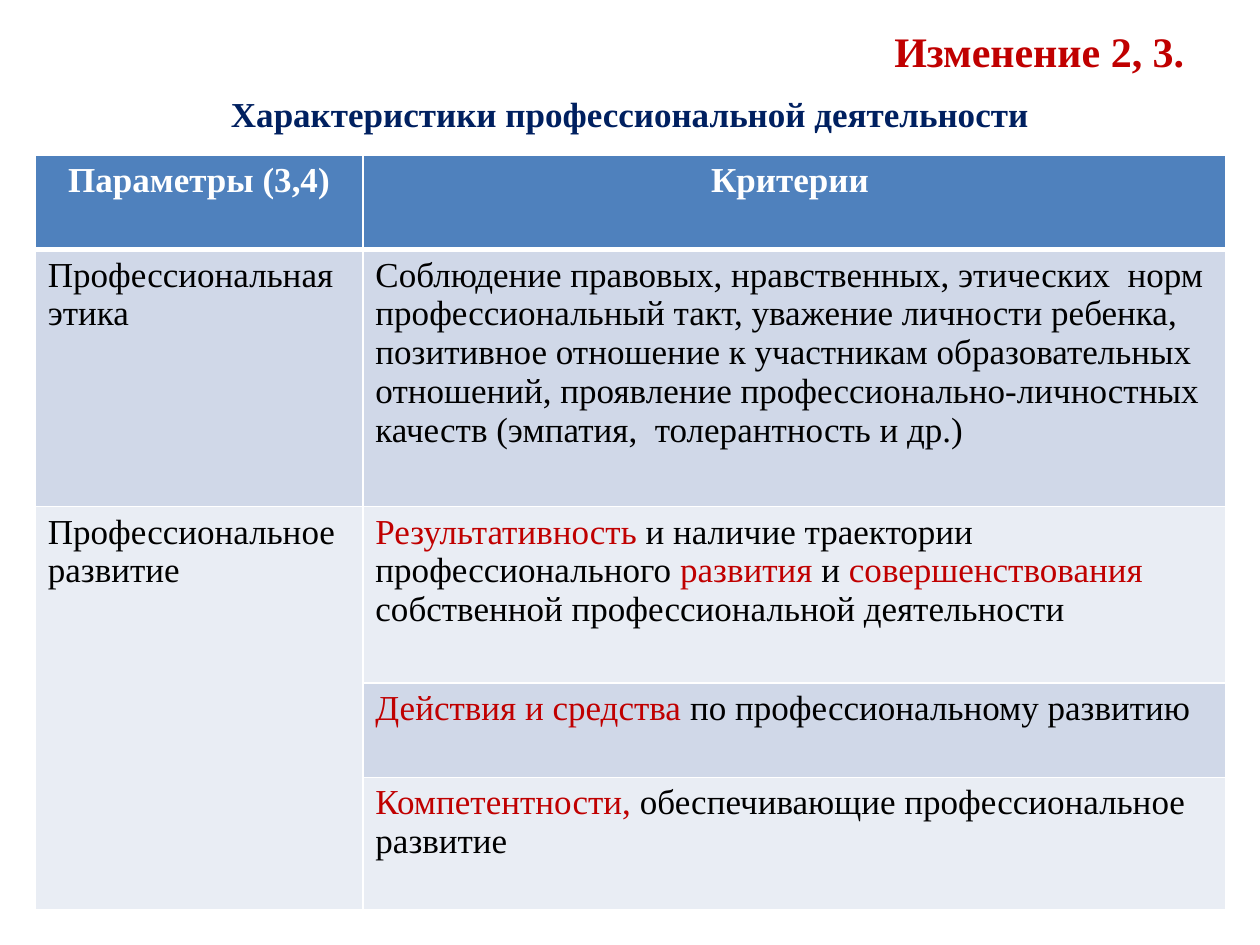
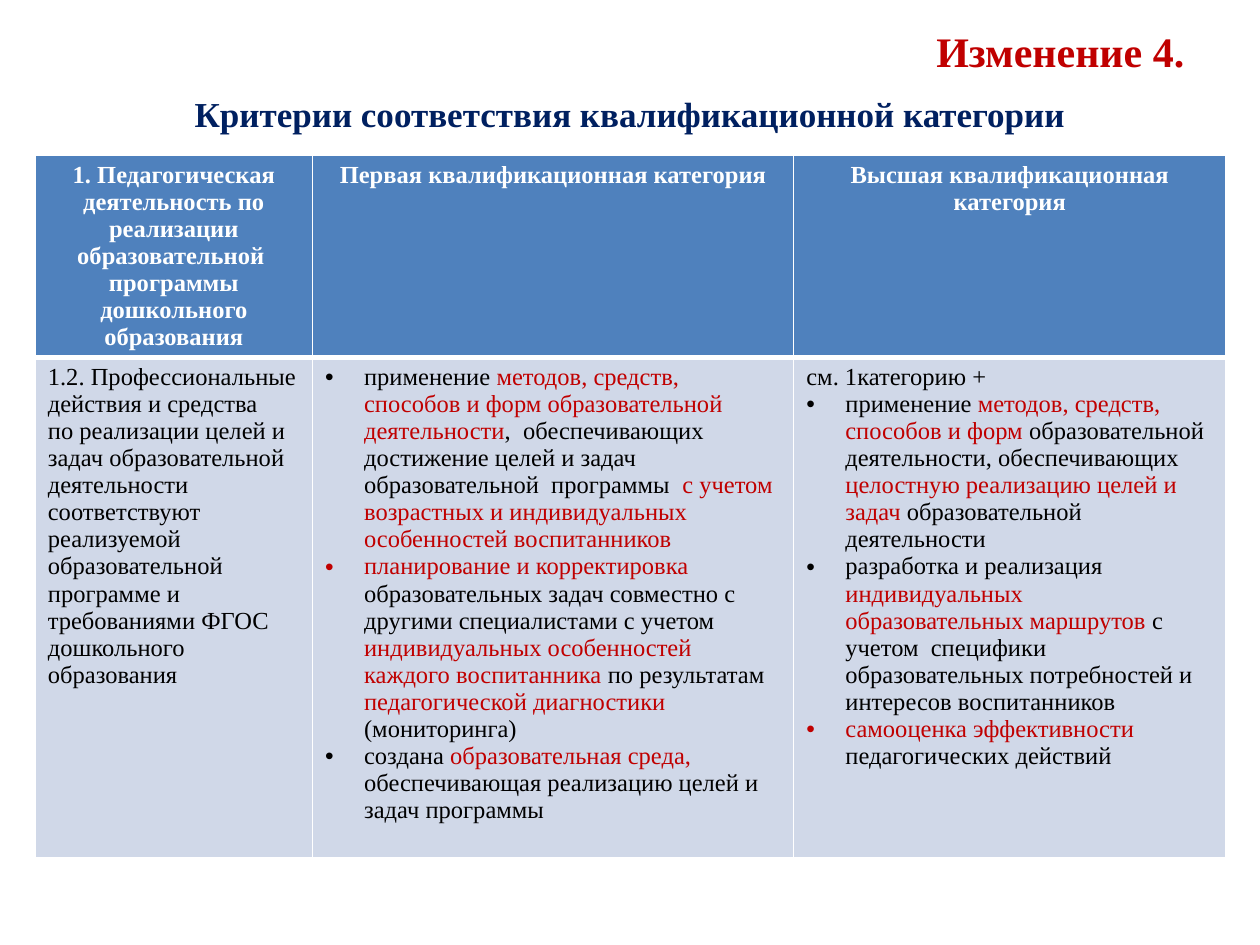
from dataclasses import dataclass
from typing import NamedTuple

from lxml.etree import SubElement
from pptx import Presentation
from pptx.dml.color import RGBColor
from pptx.enum.text import MSO_ANCHOR, PP_ALIGN
from pptx.oxml import parse_xml
from pptx.oxml.ns import nsdecls, qn
from pptx.util import Emu, Inches, Pt

COLORS = {
    "accent": "C00000",
    "heading": "002060",
    "ink": "000000",
    "white": "FFFFFF",
    "header": "4F81BD",
    "odd": "D0D8E8",
    "even": "E9EDF4",
}
FONT = "Times New Roman"
SLIDE_WIDTH, SLIDE_HEIGHT = Inches(10), Inches(7.5)
GRID = 100
BULLET_INDENT = Inches(0.31)
THIN, THICK = 1, 3


class Area(NamedTuple):
    left: float
    top: float
    width: float
    height: float


class Line(NamedTuple):
    text: str
    bullet: bool = False


@dataclass
class CriteriaSlide:
    change: str
    subject: str
    text_size: int
    columns: list[float]
    rows: list[float]
    header: list[str]
    body: list[list[list[Line]]]
    merged_rows: tuple[int, int] | None = None


CHANGE_AREA = Area(5, 1.73, 90, 7.33)
SUBJECT_AREA = Area(5, 9.07, 90, 80.27)
TABLE_LEFT, TABLE_TOP = 2.8, 16.4

SLIDES = [
    CriteriaSlide(
        change="Изменение 2, 3.",
        subject="Характеристики профессиональной деятельности",
        text_size=20,
        columns=[26, 68.5],
        rows=[10, 27.2, 18.67, 10, 14],
        header=["Параметры (3,4)", "Критерии "],
        body=[
            [
                [Line("Профессиональная этика")],
                [
                    Line("Соблюдение правовых, нравственных, этических  норм"),
                    Line("профессиональный такт, уважение личности ребенка, "
                         "позитивное отношение к участникам образовательных отношений, "
                         "проявление профессионально-личностных  качеств "
                         "(эмпатия,  толерантность и др.)"),
                ],
            ],
            [
                [Line("Профессиональное развитие")],
                [Line("|Результативность| и наличие траектории профессионального "
                      "|развития| и |совершенствования |"
                      "собственной профессиональной деятельности")],
            ],
            [[], [Line("|Действия и средства |по профессиональному развитию")]],
            [[], [Line("|Компетентности, |обеспечивающие профессиональное развитие")]],
        ],
        merged_rows=(2, 4),
    ),
    CriteriaSlide(
        change="Изменение 4.",
        subject="Критерии соответствия квалификационной категории",
        text_size=14,
        columns=[22, 38.2, 34.3],
        rows=[21.33, 52.93],
        header=[
            "1. Педагогическая деятельность по реализации образовательной  "
            "программы дошкольного образования",
            "Первая квалификационная категория",
            "Высшая квалификационная категория",
        ],
        body=[
            [
                [
                    Line("1.2. Профессиональные действия и средства"),
                    Line("по реализации целей и задач образовательной деятельности  "
                         "соответствуют  реализуемой образовательной программе и "
                         "требованиями ФГОС дошкольного образования"),
                ],
                [
                    Line("применение |методов, средств, способов и форм образовательной "
                         "деятельности|,  обеспечивающих достижение целей и задач "
                         "образовательной  программы  |с учетом возрастных и "
                         "индивидуальных особенностей воспитанников|", True),
                    Line("|планирование и корректировка |образовательных задач совместно "
                         "с другими специалистами с учетом  |индивидуальных особенностей "
                         "каждого воспитанника |по результатам |педагогической "
                         "диагностики |(мониторинга)", True),
                    Line("создана |образовательная среда, |обеспечивающая реализацию "
                         "целей и задач программы", True),
                ],
                [
                    Line("см. 1категорию +"),
                    Line("применение |методов, средств, способов и форм |образовательной "
                         "деятельности, обеспечивающих |целостную реализацию целей и "
                         "задач| образовательной деятельности", True),
                    Line("разработка и реализация |индивидуальных  образовательных "
                         "маршрутов| с учетом  специфики образовательных потребностей "
                         "и интересов воспитанников", True),
                    Line("|самооценка эффективности |педагогических действий", True),
                ],
            ],
        ],
    ),
]


def across(columns: float) -> Emu:
    return Emu(round(SLIDE_WIDTH * columns / GRID))


def down(rows: float) -> Emu:
    return Emu(round(SLIDE_HEIGHT * rows / GRID))


def rgb(name: str) -> RGBColor:
    return RGBColor.from_string(COLORS[name])


def set_bullet(paragraph, bullet: bool) -> None:
    properties = paragraph._p.get_or_add_pPr()
    indent = BULLET_INDENT if bullet else 0
    properties.set("marL", str(indent))
    properties.set("indent", str(-indent))
    if bullet:
        SubElement(properties, qn("a:buFont"), typeface="Arial")
        SubElement(properties, qn("a:buChar"), char="•")
    else:
        SubElement(properties, qn("a:buNone"))


def write_text(frame, lines: list[Line], *, size: int, color: str,
               bold: bool = False, align=PP_ALIGN.LEFT) -> None:
    for index, line in enumerate(lines):
        paragraph = frame.paragraphs[0] if index == 0 else frame.add_paragraph()
        paragraph.alignment = align
        set_bullet(paragraph, line.bullet)
        for position, words in enumerate(line.text.split("|")):
            if not words:
                continue
            run = paragraph.add_run()
            run.text = words
            run.font.name = FONT
            run.font.size = Pt(size)
            run.font.bold = bold
            run.font.color.rgb = rgb("accent" if position % 2 else color)


def fill_placeholder(placeholder, area: Area, text: str, **text_format) -> None:
    placeholder.left, placeholder.top = across(area.left), down(area.top)
    placeholder.width, placeholder.height = across(area.width), down(area.height)
    write_text(placeholder.text_frame, [Line(text)], bold=True, **text_format)


def style_cell(cell, row: int) -> None:
    cell.fill.solid()
    cell.fill.fore_color.rgb = rgb("header" if row == 0 else "odd" if row % 2 else "even")
    widths = {
        "lnL": THIN,
        "lnR": THIN,
        "lnT": THICK if row == 1 else THIN,
        "lnB": THICK if row == 0 else THIN,
    }
    properties = cell._tc.get_or_add_tcPr()
    for index, (side, width) in enumerate(widths.items()):
        properties.insert(index, parse_xml(
            f'<a:{side} {nsdecls("a")} w="{Pt(width)}"><a:solidFill>'
            f'<a:srgbClr val="{COLORS["white"]}"/></a:solidFill></a:{side}>'))


def add_criteria_table(slide, content: CriteriaSlide) -> None:
    table = slide.shapes.add_table(
        len(content.rows), len(content.columns),
        across(TABLE_LEFT), down(TABLE_TOP),
        across(sum(content.columns)), down(sum(content.rows))).table
    table.first_row = table.horz_banding = False
    for column, width in zip(table.columns, content.columns):
        column.width = across(width)
    for row, height in zip(table.rows, content.rows):
        row.height = down(height)
    if content.merged_rows:
        first, last = content.merged_rows
        table.cell(first, 0).merge(table.cell(last, 0))

    header = [[Line(title)] for title in content.header]
    for row, entries in enumerate([header, *content.body]):
        text_format = (dict(color="white", bold=True, align=PP_ALIGN.CENTER)
                       if row == 0 else dict(color="ink"))
        for column, lines in enumerate(entries):
            cell = table.cell(row, column)
            style_cell(cell, row)
            write_text(cell.text_frame, lines, size=content.text_size, **text_format)


def add_criteria_slide(presentation, content: CriteriaSlide) -> None:
    slide = presentation.slides.add_slide(presentation.slide_layouts[1])
    change, subject = slide.placeholders
    fill_placeholder(change, CHANGE_AREA, content.change,
                     size=24, color="accent", align=PP_ALIGN.RIGHT)
    change.text_frame.vertical_anchor = MSO_ANCHOR.MIDDLE
    fill_placeholder(subject, SUBJECT_AREA, content.subject,
                     size=20, color="heading", align=PP_ALIGN.CENTER)
    add_criteria_table(slide, content)


def main() -> None:
    presentation = Presentation()
    presentation.slide_width, presentation.slide_height = SLIDE_WIDTH, SLIDE_HEIGHT
    for content in SLIDES:
        add_criteria_slide(presentation, content)
    presentation.save("out.pptx")


if __name__ == "__main__":
    main()
